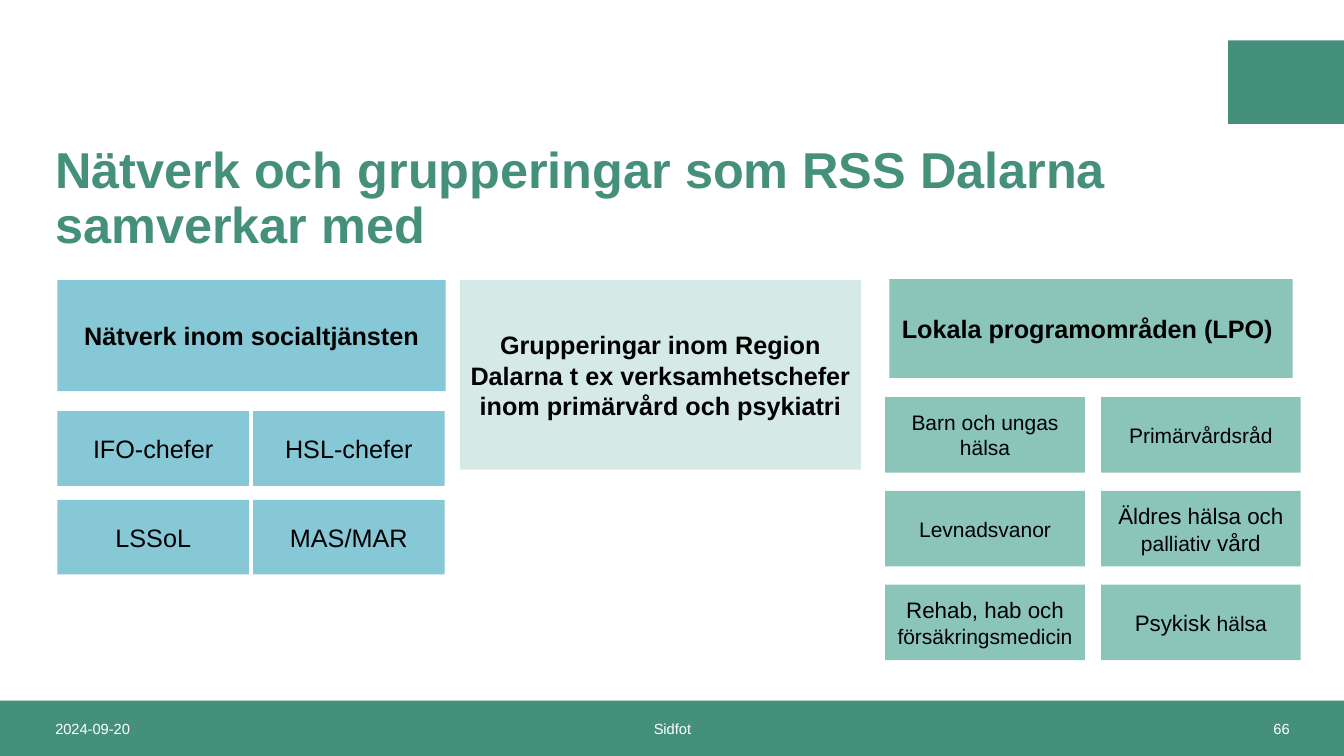
from pptx import Presentation
from pptx.dml.color import RGBColor
from pptx.enum.shapes import MSO_SHAPE
from pptx.enum.text import MSO_ANCHOR, PP_ALIGN
from pptx.util import Inches, Pt

COLORS = {
    "green": "45907A",
    "blue": "87C8D7",
    "mint": "D5EAE6",
    "sage": "8BC5BA",
    "black": "000000",
    "white": "FFFFFF",
}

prs = Presentation()
prs.slide_width, prs.slide_height = Inches(13.33), Inches(7.5)
s = prs.slides.add_slide(prs.slide_layouts[6])


def write(sp, runs, color, bold=False, align=PP_ALIGN.CENTER):
    """Fill a shape with one paragraph of (text, size) runs."""
    tf = sp.text_frame
    tf.word_wrap = True
    tf.vertical_anchor = MSO_ANCHOR.MIDDLE
    p = tf.paragraphs[0]
    p.alignment = align
    for text, size in runs:
        r = p.add_run()
        r.text = text
        r.font.name = "Arial"
        r.font.size = Pt(size)
        r.font.bold = bold
        r.font.color.rgb = RGBColor.from_string(COLORS[color])
    return p


def box(x, y, w, h, fill, runs=(), bold=False):
    sp = s.shapes.add_shape(MSO_SHAPE.RECTANGLE, Inches(x), Inches(y), Inches(w), Inches(h))
    sp.shadow.inherit = False
    sp.fill.solid()
    sp.fill.fore_color.rgb = RGBColor.from_string(COLORS[fill])
    sp.line.fill.background()
    write(sp, runs, "black", bold)


# Corner block and footer band
box(12.18, 0.4, 1.15, 0.83, "green")
box(0, 6.95, 13.33, 0.55, "green")

# Footer texts
for x, w, text, align in [
    (0.45, 3.47, "2024-09-20", PP_ALIGN.LEFT),
    (4.42, 4.5, "Sidfot", PP_ALIGN.CENTER),
    (9.42, 3.47, "66", PP_ALIGN.RIGHT),
]:
    footer = s.shapes.add_textbox(Inches(x), Inches(6.95), Inches(w), Inches(0.55))
    write(footer, [(text, 10.5)], "white", align=align)

# Title
title = s.shapes.add_textbox(Inches(0.45), Inches(1.32), Inches(11.39), Inches(1.32))
p = write(title, [("Nätverk och grupperingar som RSS Dalarna samverkar med", 36)],
          "green", bold=True, align=PP_ALIGN.LEFT)
p.line_spacing = 0.9

# Column headings
for x, y, w, h, fill, text in [
    (0.57, 2.78, 3.85, 1.1, "blue", "Nätverk inom socialtjänsten"),
    (4.56, 2.78, 3.98, 1.88, "mint",
     "Grupperingar inom Region Dalarna t ex verksamhetschefer inom primärvård och psykiatri"),
    (8.82, 2.77, 4, 0.98, "sage", "Lokala programområden (LPO) "),
]:
    box(x, y, w, h, fill, [(text, 18)], bold=True)

# Networks within social services, two per row
networks = ["IFO-chefer", "HSL-chefer", "LSSoL", "MAS/MAR"]
for i, name in enumerate(networks):
    row, col = divmod(i, 2)
    box(0.57 + 1.94 * col, 4.08 + 0.88 * row, 1.9, 0.74, "blue", [(name, 18)])

# Local programme areas, two per row
areas = [
    [("Barn och ungas hälsa", 15)],
    [("Primärvårdsråd", 15)],
    [("Levnadsvanor", 15)],
    [("Äldres hälsa och ", 16), ("palliativ", 15), (" vård", 16)],
    [("Rehab, hab och ", 16), ("försäkringsmedicin", 15)],
    [("Psykisk ", 16), ("hälsa", 15)],
]
for i, runs in enumerate(areas):
    row, col = divmod(i, 2)
    box(8.78 + 2.14 * col, 3.94 + 0.93 * row, 1.98, 0.75, "sage", runs)

prs.save("out.pptx")
